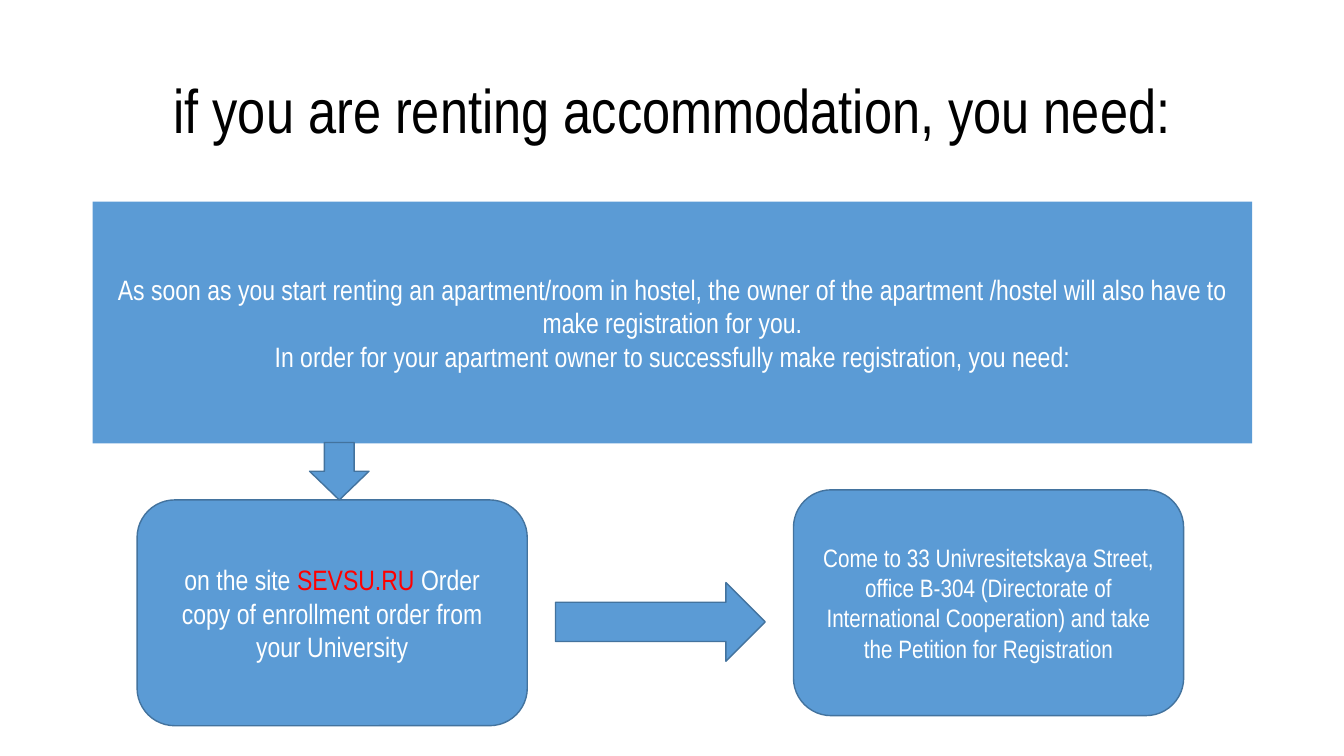
from pptx import Presentation
from pptx.dml.color import RGBColor
from pptx.enum.shapes import MSO_SHAPE
from pptx.enum.text import MSO_ANCHOR, PP_ALIGN
from pptx.util import Pt

PX = 9144
BLUE = RGBColor(0x5B, 0x9B, 0xD5)
EDGE = RGBColor(0x43, 0x73, 0x9E)
RED = RGBColor(0xFF, 0x00, 0x00)
BLACK = RGBColor(0x00, 0x00, 0x00)
WHITE = RGBColor(0xFF, 0xFF, 0xFF)


def scale(box):
    return [n * PX for n in box]


def write(shape, paras, size=20, color=WHITE, space=1.0):
    frame = shape.text_frame
    frame.word_wrap = True
    frame.vertical_anchor = MSO_ANCHOR.MIDDLE
    for i, runs in enumerate(paras):
        para = frame.add_paragraph() if i else frame.paragraphs[0]
        para.alignment = PP_ALIGN.CENTER
        para.line_spacing = space
        for text, tint in runs:
            run = para.add_run()
            run.text = text
            run.font.name = "Arial Narrow"
            run.font.size = Pt(size)
            run.font.color.rgb = tint or color


def draw(slide, kind, box, edge=EDGE):
    shape = slide.shapes.add_shape(kind, *scale(box))
    shape.shadow.inherit = False
    shape.fill.solid()
    shape.fill.fore_color.rgb = BLUE
    if edge:
        shape.line.color.rgb = edge
        shape.line.width = Pt(1)
    else:
        shape.line.fill.background()
    return shape


def add_title(slide, box):
    title = slide.shapes.add_textbox(*scale(box))
    write(title, [[("if you are renting accommodation, you need:", None)]],
          size=44, color=BLACK, space=0.9)


def add_intro(slide, box):
    intro = draw(slide, MSO_SHAPE.RECTANGLE, box, edge=None)
    write(intro, [
        [("As soon as you start renting an apartment/room in hostel, the owner "
          "of the apartment /hostel will also have to make registration for you.", None)],
        [("In order for your apartment owner to successfully make registration, "
          "you need:", None)],
    ])


def add_steps(slide, box):
    left, top, width, height = box
    wide, high, drop = 387, 224, 57
    right = left + width - wide
    order = draw(slide, MSO_SHAPE.ROUNDED_RECTANGLE,
                 (left, top + drop, wide, high))
    write(order, [[("on the site ", None), ("SEVSU.RU", RED),
                   (" Order copy of enrollment order from your University", None)]])
    visit = draw(slide, MSO_SHAPE.ROUNDED_RECTANGLE,
                 (right, top + drop - 10, wide, high))
    write(visit, [[("Come to 33 Univresitetskaya Street, office B-304 (Directorate of "
                    "International Cooperation) and take the Petition for Registration",
                    None)]], size=18)
    draw(slide, MSO_SHAPE.DOWN_ARROW, (left + 171, top, 59, drop))
    gap = 28
    start = left + wide + gap
    draw(slide, MSO_SHAPE.RIGHT_ARROW,
         (start, top + height // 2 - 1, right - gap - start, 78))


def main():
    deck = Presentation()
    deck.slide_width, deck.slide_height = scale((1333, 750))
    slide = deck.slides.add_slide(deck.slide_layouts[6])
    add_title(slide, (92, 40, 1150, 145))
    add_intro(slide, (92, 200, 1150, 240))
    add_steps(slide, (136, 439, 1038, 281))
    deck.save("out.pptx")


if __name__ == "__main__":
    main()
